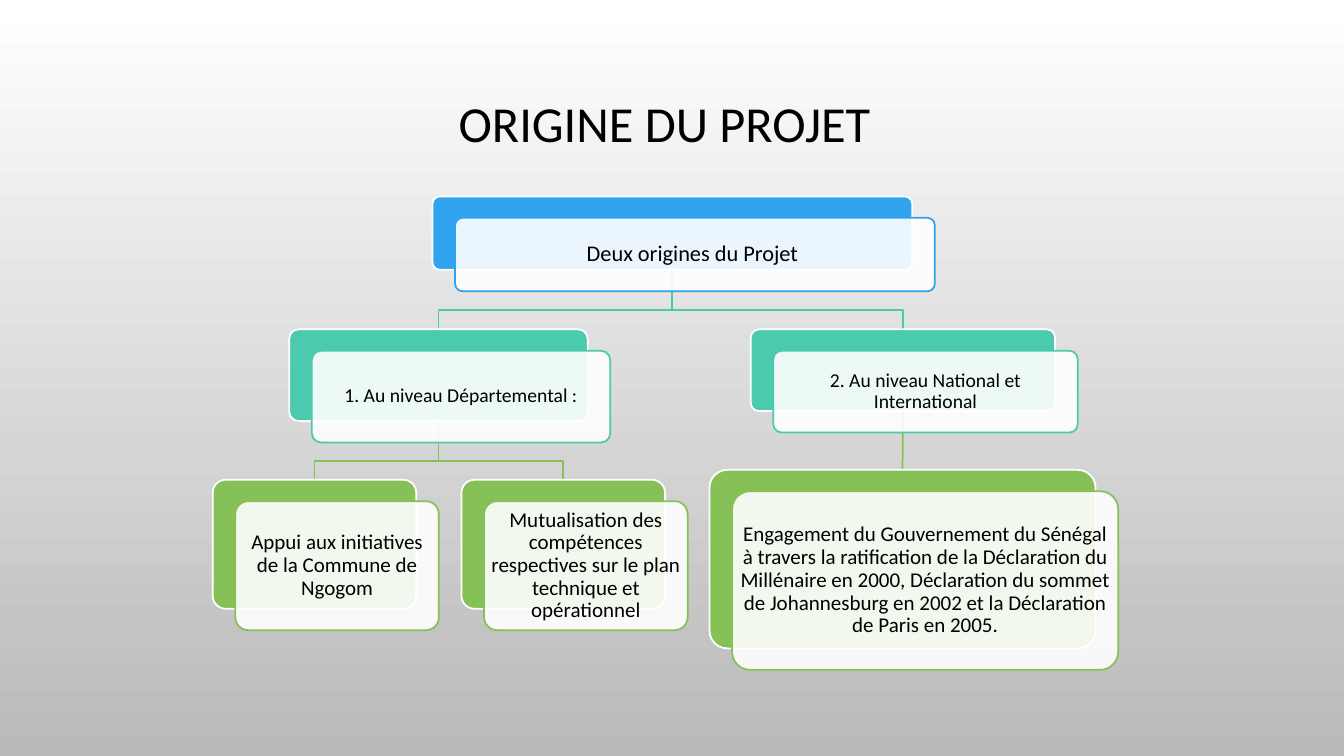
import pptx
import pptx.util
import pptx.dml.color
import pptx.enum.shapes
import pptx.enum.text
import pptx.oxml.xmlchemy
import lxml.etree

Cm, Pt = pptx.util.Cm, pptx.util.Pt
KIND = pptx.enum.shapes.MSO_SHAPE
NS = "{http://schemas.openxmlformats.org/drawingml/2006/main}"
HUES = {"root": "2FA3EE", "level": "4BCAAD", "leaf": "86C157",
        "white": "FFFFFF", "black": "000000", "grey": "B9B9B9"}


def rgb(name):
    return pptx.dml.color.RGBColor.from_string(HUES[name])


def write(shape, text, size, form):
    frame = shape.text_frame
    form = {"word_wrap": True,
            "vertical_anchor": pptx.enum.text.MSO_ANCHOR.MIDDLE, **form}
    for key, value in form.items():
        setattr(frame, key, value)
    para = frame.paragraphs[0]
    para.text = text
    para.alignment = pptx.enum.text.PP_ALIGN.CENTER
    para.line_spacing = 0.9
    for key, value in {"name": "Calibri", "size": Pt(size)}.items():
        setattr(para.font, key, value)
    para.font.color.rgb = rgb("black")


# Slide and background
deck = pptx.Presentation()
deck.slide_width, deck.slide_height = Cm(33.87), Cm(19.05)
slide = deck.slides.add_slide(deck.slide_layouts[6])
shapes = slide.shapes
back = slide.background.fill
back.gradient()
back.gradient_angle = 270
for stop, hue, place in zip(back.gradient_stops, ("white", "grey"), (0, 1)):
    stop.color.rgb = rgb(hue)
    stop.position = place

# Title
title = shapes.add_textbox(Cm(2.36), Cm(1.65), Cm(28.78), Cm(4.45))
write(title, "ORIGINE DU PROJET", 36, {"margin_bottom": Cm(1.52)})

# Tree: parent, hue, left, top, width, height, text size, text
nodes = {
    "root": (None, "root", 10.9, 4.95, 12.09, 1.85, 16,
             "Deux origines du Projet "),
    "local": ("root", "level", 7.29, 8.3, 7.52, 2.31, 14,
              "1. Au niveau Départemental :"),
    "help": ("local", "leaf", 5.36, 12.09, 5.13, 3.25, 15,
             "Appui aux initiatives de la Commune de Ngogom"),
    "share": ("local", "leaf", 11.63, 12.09, 5.13, 3.25, 15,
              "Mutualisation des compétences respectives sur le plan "
              "technique et opérationnel"),
    "nation": ("root", "level", 18.92, 8.3, 7.67, 2.06, 14,
               "2. Au niveau National et International"),
    "pledge": ("nation", "leaf", 17.88, 11.84, 9.73, 4.5, 15,
               "Engagement du Gouvernement du Sénégal à travers la "
               "ratification de la Déclaration du Millénaire en 2000, "
               "Déclaration du sommet de Johannesburg en 2002 et la "
               "Déclaration de Paris en 2005."),
}

# Links, behind the cards
BEND = 0.48
links = {}
for name, (above, hue, left, top, width, *rest) in nodes.items():
    if above is None:
        continue
    _, _, x, y, w, h, *rest = nodes[above]
    start, end = (x + w / 2, y + h), (left + width / 2, top)
    if abs(start[0] - end[0]) < 0.05:
        link = shapes.add_connector(
            pptx.enum.shapes.MSO_CONNECTOR.STRAIGHT,
            *[Cm(n) for n in start + end])
        lxml.etree.SubElement(link._element.spPr, NS + "effectLst")
        links[name] = link
    else:
        path = shapes.build_freeform(Cm(start[0]), Cm(start[1]))
        bends = [(start[0], top - BEND), (end[0], top - BEND), end]
        path.add_line_segments([(Cm(a), Cm(b)) for a, b in bends], close=False)
        link = path.convert_to_shape()
        link.fill.background()
        link.shadow.inherit = False
    link.line.color.rgb = rgb(hue)
    link.line.width = Pt(1.25)

# Cards: a coloured one, then a pale one shifted over it
cards = {}
for name, (above, hue, left, top, width, height, size, text) in nodes.items():
    for dx, dy, fill, edge in ((0, 0, hue, "white"), (0.57, 0.54, "white", hue)):
        card = shapes.add_shape(KIND.ROUNDED_RECTANGLE, Cm(left + dx),
                                Cm(top + dy), Cm(width), Cm(height))
        card.adjustments[0] = 0.1
        card.shadow.inherit = False
        card.fill.solid()
        card.fill.fore_color.rgb = rgb(fill)
        card.line.color.rgb = rgb(edge)
        card.line.width = Pt(1.25)
        cards.setdefault(name, card)
    tint = card._element.spPr.find(NS + "solidFill")[0]
    lxml.etree.SubElement(tint, NS + "alpha", val="90000")
    # The round corners already inset the text by 3 % of the height
    pad = Cm(0.15 - 0.03 * height)
    write(card, text, size, {"margin_" + side: pad for side in
                             ("left", "right", "top", "bottom")})

# Join the straight links to their cards
for name, link in links.items():
    link.begin_connect(cards[nodes[name][0]], 2)
    link.end_connect(cards[name], 0)

deck.save("out.pptx")
